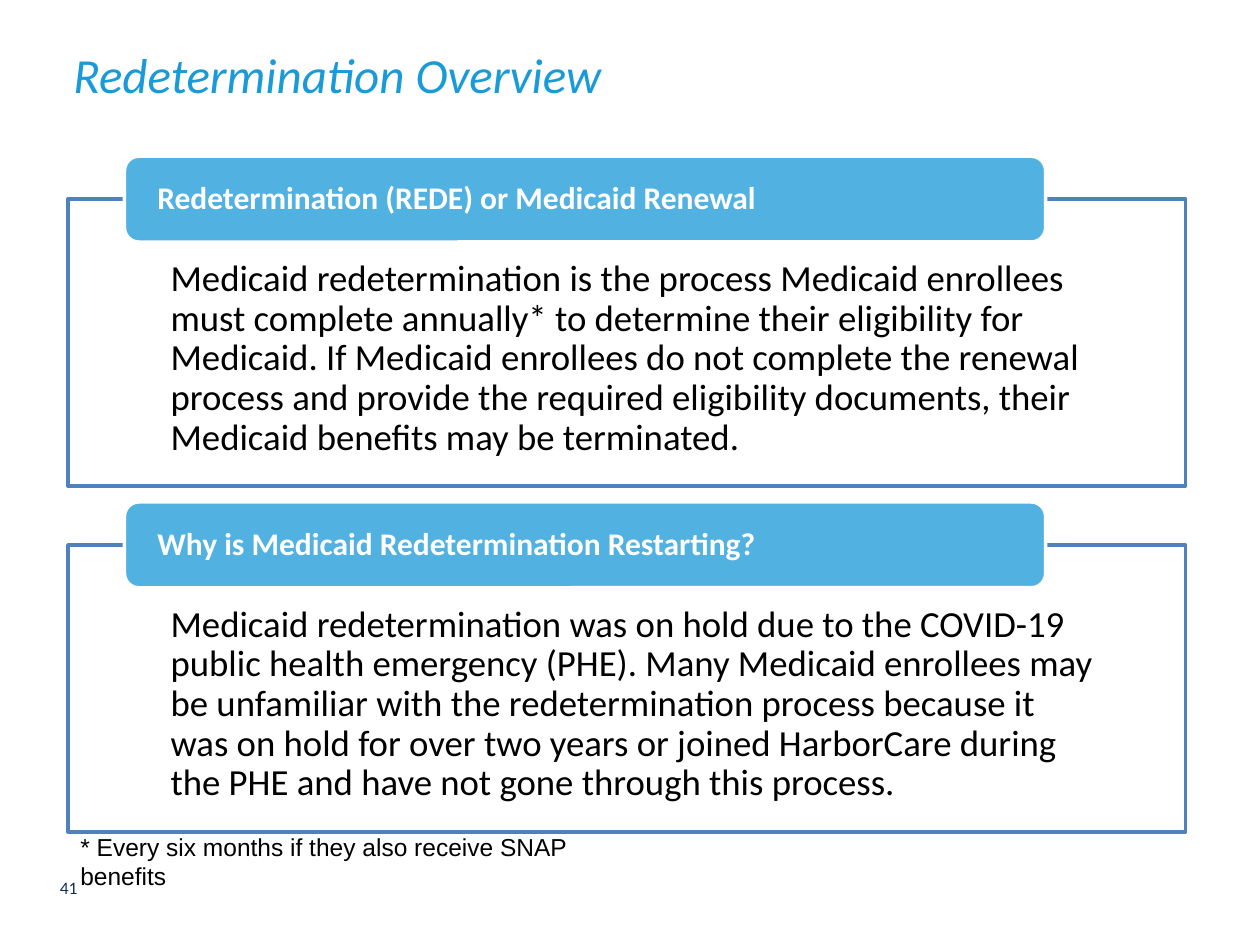
from pptx import Presentation
from pptx.dml.color import RGBColor
from pptx.enum.shapes import MSO_SHAPE as SHAPE
from pptx.enum.text import MSO_ANCHOR as ANCHOR, MSO_AUTO_SIZE as AUTO, PP_ALIGN as ALIGN
from pptx.util import Cm, Pt

TITLE_BLUE = RGBColor(0x1A, 0x9A, 0xD7)
HEADER_BLUE = RGBColor(0x51, 0xB1, 0xE0)
FRAME_BLUE = RGBColor(0x4F, 0x81, 0xBD)
NAVY = RGBColor(0x14, 0x32, 0x56)
WHITE = RGBColor(0xFF, 0xFF, 0xFF)
BLACK = RGBColor(0, 0, 0)

PANELS = [
    ("Redetermination (REDE) or Medicaid Renewal",
     "Medicaid redetermination is the process Medicaid enrollees must complete "
     "annually* to determine their eligibility for Medicaid. If Medicaid enrollees "
     "do not complete the renewal process and provide the required eligibility "
     "documents, their Medicaid benefits may be terminated."),
    ("Why is Medicaid Redetermination Restarting?",
     "Medicaid redetermination was on hold due to the COVID-19 public health "
     "emergency (PHE). Many Medicaid enrollees may be unfamiliar with the "
     "redetermination process because it was on hold for over two years or joined "
     "HarborCare during the PHE and have not gone through this process."),
]
PANEL_LEFT, PANEL_TOP, PANEL_WIDTH, PANEL_HEIGHT = 1.37, 3.15, 22.53, 6.65
PANEL_PITCH = 6.97
HEADER_HEIGHT = 1.73


def write(sp, text, size, color=BLACK, font="Calibri", bold=False, italic=False,
          align=ALIGN.LEFT, anchor=ANCHOR.TOP, spacing=1.0,
          insets=(0.25, 0.13, 0.25, 0.13)):
    """Fill a shape with one formatted paragraph; insets are in cm: l, t, r, b."""
    tf = sp.text_frame
    tf.word_wrap = True
    tf.auto_size = AUTO.NONE
    tf.vertical_anchor = anchor
    tf.margin_left, tf.margin_top, tf.margin_right, tf.margin_bottom = map(Cm, insets)
    p = tf.paragraphs[0]
    p.alignment = align
    p.line_spacing = spacing
    r = p.add_run()
    r.text = text
    r.font.name = font
    r.font.size = Pt(size)
    r.font.bold = bold
    r.font.italic = italic
    r.font.color.rgb = color


def add_box(slide, kind, box, fill, line):
    sp = slide.shapes.add_shape(kind, *map(Cm, box))
    sp.shadow.inherit = False
    sp.fill.solid()
    sp.fill.fore_color.rgb = fill
    sp.line.color.rgb = line
    sp.line.width = Pt(2)
    return sp


def add_title(slide, left, top, width, height):
    sp = slide.shapes.title
    sp.left, sp.top, sp.width, sp.height = map(Cm, (left, top, width, height))
    write(sp, "Redetermination Overview", 28, color=TITLE_BLUE, italic=True,
          anchor=ANCHOR.MIDDLE, insets=(0.51, 0, 0.25, 0))


def add_panel(slide, left, top, width, height, heading, body):
    """Add a framed text whose heading tab straddles the top of the frame."""
    half = HEADER_HEIGHT / 2
    frame = add_box(slide, SHAPE.RECTANGLE, (left, top + half, width, height - half),
                    WHITE, FRAME_BLUE)
    write(frame, body, 21, spacing=0.9, insets=(2.07, 1.22, 1.75, 0.41))
    header = add_box(slide, SHAPE.ROUNDED_RECTANGLE,
                     (left + 1.14, top, 18.57, HEADER_HEIGHT), HEADER_BLUE, WHITE)
    write(header, heading, 18, color=WHITE, bold=True, anchor=ANCHOR.MIDDLE,
          spacing=0.9, insets=(0.58, 0, 0.58, 0))


def add_note(slide, left, top, width, height, text, size, **fmt):
    sp = slide.shapes.add_textbox(*map(Cm, (left, top, width, height)))
    write(sp, text, size, **fmt)


def main():
    prs = Presentation()
    prs.slide_width, prs.slide_height = Cm(25.4), Cm(19.05)
    slide = prs.slides.add_slide(prs.slide_layouts[5])

    add_title(slide, 0.97, 0.76, 21.8, 1.47)
    add_note(slide, 0.71, 17.58, 1.35, 0.61, "41", 10, color=NAVY,
             align=ALIGN.CENTER, anchor=ANCHOR.MIDDLE)
    for i, (heading, body) in enumerate(PANELS):
        # Each panel is one pitch below the one before it
        add_panel(slide, PANEL_LEFT, PANEL_TOP + i * PANEL_PITCH,
                  PANEL_WIDTH, PANEL_HEIGHT, heading, body)
    add_note(slide, 1.37, 16.64, 11.15, 0.86,
             "* Every six months if they also receive SNAP benefits", 14, font="Arial")

    prs.save("out.pptx")


if __name__ == "__main__":
    main()
